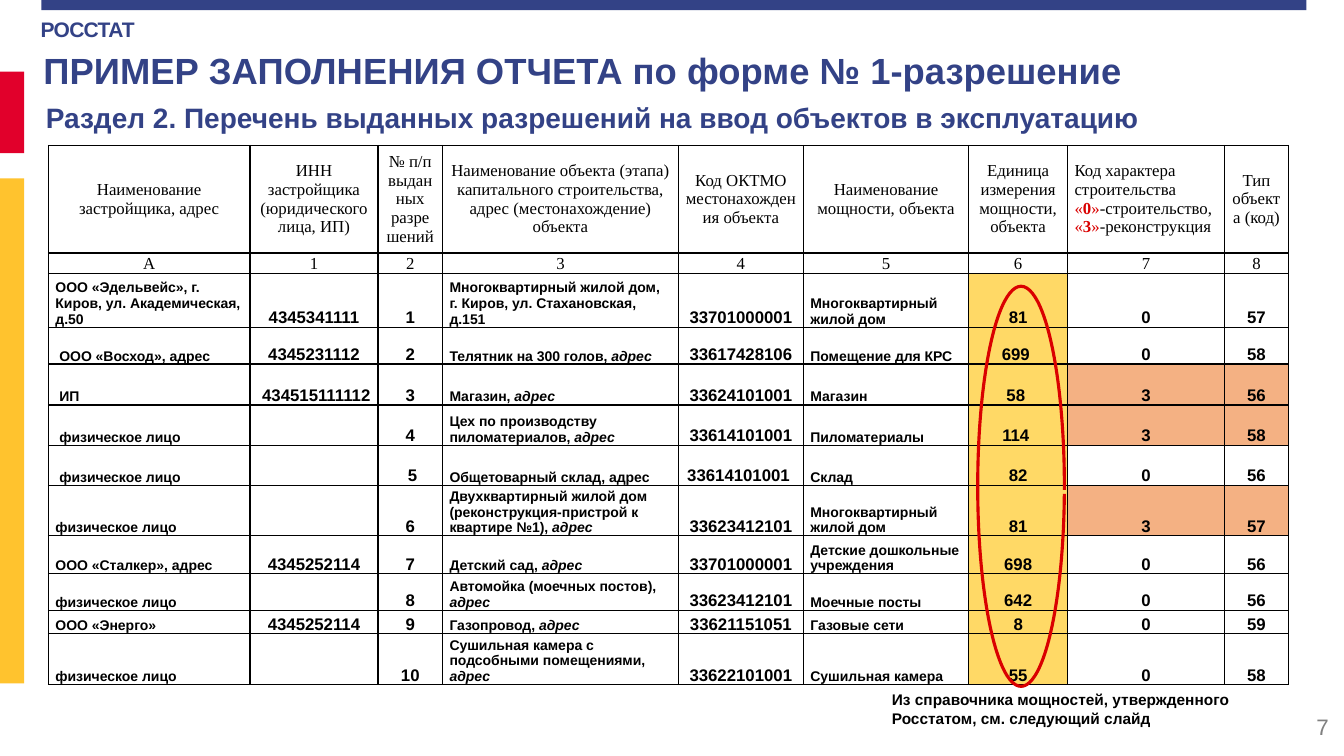
"""Builds the slide with a sample permit report table."""
import pptx
import pptx.util
import pptx.dml.color
import pptx.enum.shapes
import pptx.enum.text
import pptx.oxml

Pt = pptx.util.Pt
RGBColor = pptx.dml.color.RGBColor
ALIGN = pptx.enum.text.PP_ALIGN
ANCHOR = pptx.enum.text.MSO_ANCHOR
SHAPE = pptx.enum.shapes.MSO_SHAPE

NAVY = RGBColor(0x33, 0x42, 0x86)
CRIMSON = RGBColor(0xE1, 0x00, 0x2B)
AMBER = RGBColor(0xFF, 0xC3, 0x2E)
BLACK = RGBColor(0x00, 0x00, 0x00)
RED = RGBColor(0xDA, 0x00, 0x00)
GRAY = RGBColor(0x80, 0x80, 0x80)
YELLOW = RGBColor(0xFF, 0xD9, 0x66)
ORANGE = RGBColor(0xF4, 0xB1, 0x83)

HEADERS = [
    "Наименование застройщика, адрес",
    "ИНН застройщика (юридического лица, ИП)",
    "№ п/п выданных разрешений",
    "Наименование объекта (этапа) капитального строительства, адрес (местонахождение) объекта",
    "Код ОКТМО местонахождения объекта",
    "Наименование мощности, объекта",
    "Единица измерения мощности, объекта",
    "Код характера строительства\n|«|0|»|-строительство, |«|3|»|-реконструкция",
    "Тип объекта (код)",
]
PERMITS = [
    ["ООО «Эдельвейс», г. Киров, ул. Академическая, д.50", "4345341111", "1",
     "Многоквартирный жилой дом, г. Киров, ул. Стахановская, д.151", "33701000001",
     "Многоквартирный жилой дом", "81", "0", "57"],
    [" ООО «Восход», адрес", "4345231112", "2", "Телятник на 300 голов, |адрес",
     "33617428106", "Помещение для КРС", "699 ", "0", "58"],
    [" ИП", " 434515111112", "3", "Магазин, |адрес", "33624101001", "Магазин",
     "58 ", "3", "56"],
    [" физическое лицо", "", "4", "Цех по производству пиломатериалов, |адрес",
     "33614101001", "Пиломатериалы", "114 ", "3", "58"],
    [" физическое лицо", "", " 5", "Общетоварный склад, адрес", "33614101001 ",
     "Склад", "82", "0", "56"],
    ["физическое лицо", "", "6",
     "Двухквартирный жилой дом (реконструкция-пристрой к квартире №1), |адрес",
     "33623412101", "Многоквартирный жилой дом", "81", "3", "57"],
    ["ООО «Сталкер», адрес", "4345252114", "7", "Детский сад, |адрес", "33701000001",
     "Детские дошкольные учреждения", "698", "0", "56"],
    ["физическое лицо", "", "8", "Автомойка (моечных постов), |адрес", "33623412101",
     "Моечные посты", "642", "0", "56"],
    ["ООО «Энерго»", "4345252114", "9", "Газопровод, |адрес", "33621151051",
     "Газовые сети", "8", "0", "59"],
    ["физическое лицо", "", "10", "Сушильная камера с подсобными помещениями, |адрес",
     "33622101001", "Сушильная камера", "55", "0", "58"],
]
ROWS = [HEADERS, ["А"] + [str(number) for number in range(1, 9)]] + PERMITS
COLUMN_WIDTHS = [144, 91.4, 46.1, 168.5, 89.3, 118.1, 70.6, 112.3, 45.4]
ROW_HEIGHTS = [76.8, 14.4, 38.6, 26.4, 29.2, 28.8, 28.6, 36, 27.2, 26, 17, 36.2]
NAME_COLUMNS = (0, 3, 5)


def style_run(run, size, color, bold=True, name="Arial"):
    run.font.size = Pt(size)
    run.font.color.rgb = color
    run.font.bold = bold
    run.font.name = name


def fill_text(shape, text, size, color, bold=True, align=ALIGN.LEFT):
    text_frame = shape.text_frame
    text_frame.text = text
    text_frame.word_wrap = True
    text_frame.auto_size = pptx.enum.text.MSO_AUTO_SIZE.NONE
    text_frame.vertical_anchor = ANCHOR.TOP
    text_frame.paragraphs[0].alignment = align
    style_run(text_frame.paragraphs[0].runs[0], size, color, bold)


presentation = pptx.Presentation()
presentation.slide_width, presentation.slide_height = Pt(960), Pt(540)
slide = presentation.slides.add_slide(presentation.slide_layouts[5])
shapes = slide.shapes

for left, top, width, height, color in [
    (29.5, 0, 903.6, 7.2, NAVY),
    (0, 51.1, 17.3, 58.3, CRIMSON),
    (0, 127.4, 17.3, 360.7, AMBER),
]:
    bar = shapes.add_shape(SHAPE.RECTANGLE, Pt(left), Pt(top), Pt(width), Pt(height))
    bar.shadow.inherit = False
    bar.fill.solid()
    bar.fill.fore_color.rgb = color
    bar.line.fill.background()

title = shapes.title
title.left, title.top, title.width, title.height = Pt(23.8), Pt(30.8), Pt(912), Pt(40)
fill_text(title, "ПРИМЕР ЗАПОЛНЕНИЯ ОТЧЕТА по форме № 1-разрешение", 26, NAVY)

for left, top, width, height, text, size, color, bold, align in [
    (22, 8.2, 100, 25, "РОССТАТ", 15, NAVY, True, ALIGN.LEFT),
    (25.6, 68.2, 910, 32, "Раздел 2. Перечень выданных разрешений на ввод объектов в эксплуатацию",
     20, NAVY, True, ALIGN.LEFT),
    (630, 489.6, 280, 34, "Из справочника мощностей, утвержденного Росстатом, см. следующий слайд",
     11, BLACK, True, ALIGN.LEFT),
    (733, 506, 223.2, 28, "7", 16, GRAY, False, ALIGN.RIGHT),
]:
    caption = shapes.add_textbox(Pt(left), Pt(top), Pt(width), Pt(height))
    fill_text(caption, text, size, color, bold, align)
    if text == "РОССТАТ":
        caption.text_frame.paragraphs[0].runs[0].font._element.set("spc", "-50")

table = shapes.add_table(len(ROWS), len(HEADERS), Pt(34.6), Pt(103.9),
                         Pt(sum(COLUMN_WIDTHS)), Pt(sum(ROW_HEIGHTS))).table
table.first_row = table.horz_banding = False
for column, width in zip(table.columns, COLUMN_WIDTHS):
    column.width = Pt(width)

for row_index, (values, height) in enumerate(zip(ROWS, ROW_HEIGHTS)):
    table.rows[row_index].height = Pt(height)
    is_permit = row_index > 1
    for column_index, value in enumerate(values):
        cell = table.cell(row_index, column_index)
        cell.margin_left = cell.margin_right = Pt(5)
        cell.margin_top = cell.margin_bottom = 0
        cell.vertical_anchor = ANCHOR.BOTTOM if row_index else ANCHOR.MIDDLE
        for side in "LRTB":
            cell._tc.get_or_add_tcPr().append(pptx.oxml.parse_xml(
                f'<a:ln{side} xmlns:a="http://schemas.openxmlformats.org/drawingml/2006/main" '
                f'w="12700"><a:solidFill><a:srgbClr val="{BLACK}"/></a:solidFill></a:ln{side}>'))
        if is_permit and column_index == 6:
            cell.fill.solid()
            cell.fill.fore_color.rgb = YELLOW
        elif is_permit and column_index > 6 and values[7] == "3":
            cell.fill.solid()
            cell.fill.fore_color.rgb = ORANGE
        else:
            cell.fill.background()

        is_name = is_permit and column_index in NAME_COLUMNS
        is_code_header = row_index == 0 and column_index == 7
        cell.text_frame.text = value.replace("|", "") if not is_code_header else "\n"
        for paragraph, line in zip(cell.text_frame.paragraphs, value.split("\n")):
            paragraph.alignment = ALIGN.LEFT if is_name or is_code_header else ALIGN.CENTER
            paragraph.clear()
            for part_index, part in enumerate(line.split("|")):
                if not part:
                    continue
                run = paragraph.add_run()
                run.text = part
                if is_permit:
                    style_run(run, 10 if is_name else 12, BLACK)
                    run.font.italic = part_index == 1
                else:
                    color = RED if part in "«0»3" and is_code_header else BLACK
                    style_run(run, 12, color, is_code_header and part in "03", "Times New Roman")

highlight = shapes.add_shape(SHAPE.ARC, Pt(698.4), Pt(204.5), Pt(61.9), Pt(285.8))
highlight.shadow.inherit = False
highlight.adjustments[0], highlight.adjustments[1] = 6.03, 2.86
highlight.fill.background()
highlight.line.color.rgb = RED
highlight.line.width = Pt(2.25)

presentation.save("out.pptx")
